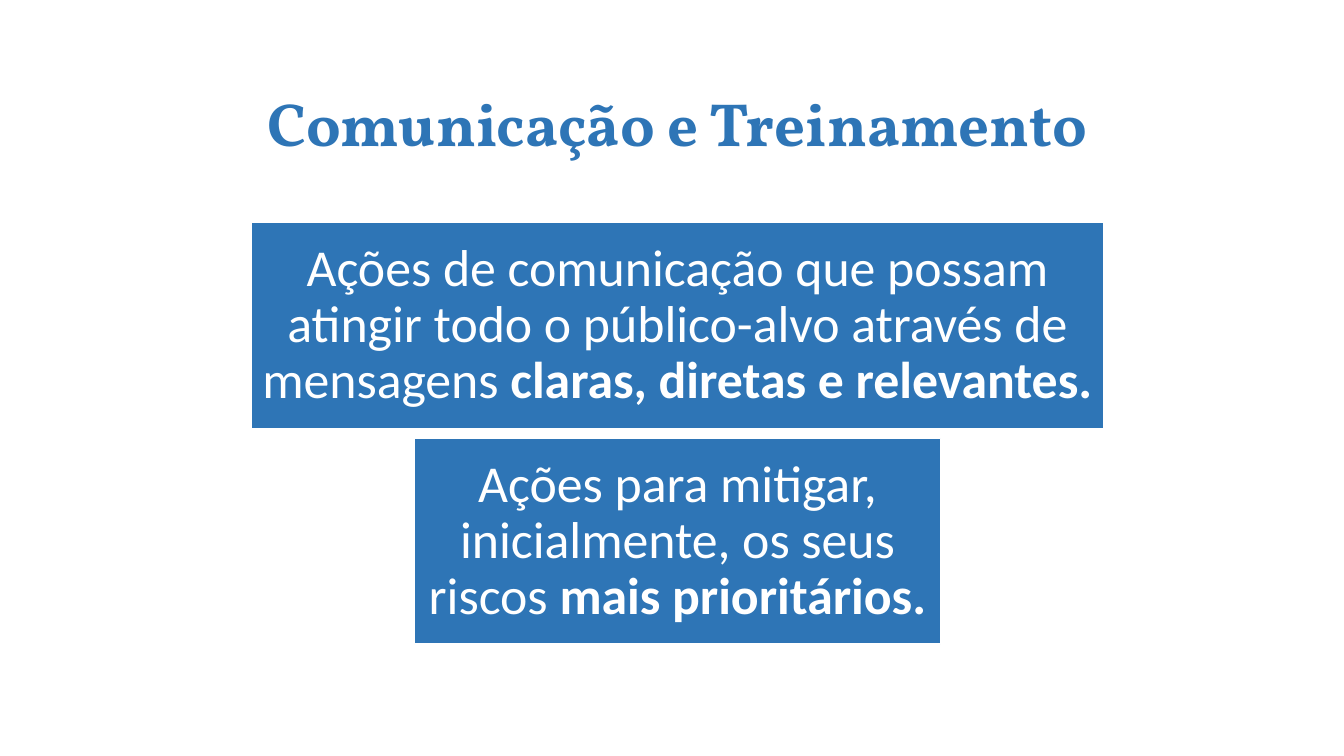
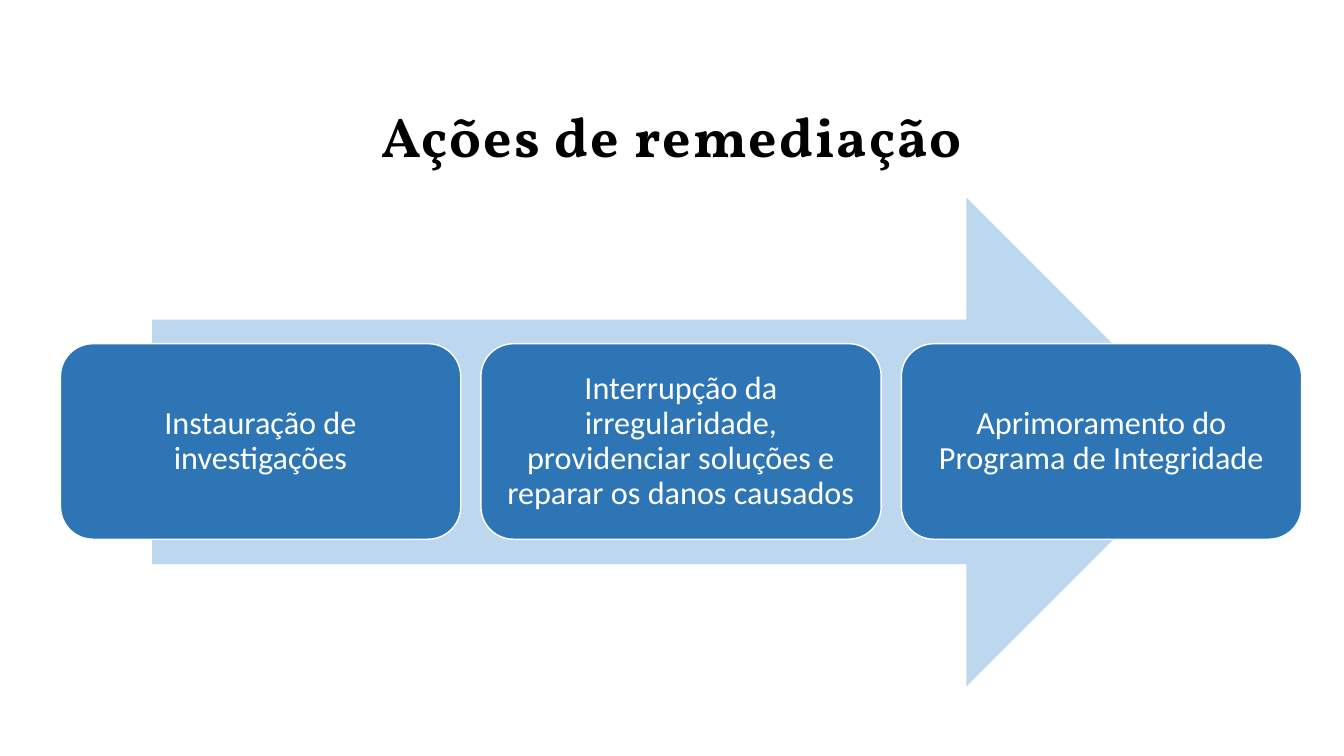
from pptx import Presentation
from pptx.dml.color import RGBColor
from pptx.enum.shapes import MSO_SHAPE
from pptx.enum.text import MSO_ANCHOR, MSO_AUTO_SIZE, PP_ALIGN
from pptx.util import Inches, Pt

RECT, ROUND = MSO_SHAPE.RECTANGLE, MSO_SHAPE.ROUNDED_RECTANGLE
ARROW = MSO_SHAPE.RIGHT_ARROW
TOP, MIDDLE = MSO_ANCHOR.TOP, MSO_ANCHOR.MIDDLE
LEFT, CENTER = PP_ALIGN.LEFT, PP_ALIGN.CENTER
NO_FIT = MSO_AUTO_SIZE.NONE

# Shared look
BLUE, PALE, WHITE, BLACK = "2E75B6", "BDD7EE", "FFFFFF", "000000"
HEAD_FONT, BODY_FONT = "Vollkorn", "Calibri"
TITLE_ONLY = 5


def color(code):
    return RGBColor.from_string(code)


def format_all(target, values):
    for name, value in values.items():
        setattr(target, name, value)


def set_frame(frame, anchor, side, edge):
    format_all(frame, {
        "word_wrap": True, "auto_size": NO_FIT, "vertical_anchor": anchor,
        "margin_left": Inches(side), "margin_right": Inches(side),
        "margin_top": Inches(edge), "margin_bottom": Inches(edge)})


def add_run(para, text, font, size, ink, bold=False):
    run = para.add_run()
    run.text = text
    format_all(run.font, {"name": font, "size": Pt(size), "bold": bold})
    run.font.color.rgb = color(ink)
    return run


def add_slide(deck, text, box, size, ink, anchor=TOP, align=LEFT,
              side=0.1, edge=0.05, leading=1.0, track=0):
    """Add a title-only slide and format its title."""
    slide = deck.slides.add_slide(deck.slide_layouts[TITLE_ONLY])
    title = slide.shapes.title
    left, top, width, height = map(Inches, box)
    format_all(title, {"left": left, "top": top,
                       "width": width, "height": height})
    set_frame(title.text_frame, anchor, side, edge)
    para = title.text_frame.paragraphs[0]
    format_all(para, {"alignment": align, "line_spacing": leading})
    run = add_run(para, text, HEAD_FONT, size, ink, True)
    if track:
        run.font._element.set("spc", str(track))
    return slide


def add_block(slide, kind, box, fill, line=None):
    shape = slide.shapes.add_shape(kind, *map(Inches, box))
    shape.shadow.inherit = False
    shape.fill.solid()
    shape.fill.fore_color.rgb = color(fill)
    if line:
        shape.line.color.rgb = color(line)
        shape.line.width = Pt(1)
    else:
        shape.line.fill.background()
    return shape


def add_card(slide, kind, box, size, text, strong=""):
    """Add a blue card with white text that may end in bold."""
    card = add_block(slide, kind, box, BLUE, WHITE)
    set_frame(card.text_frame, MIDDLE, 0.1, 0.1)
    para = card.text_frame.paragraphs[0]
    format_all(para, {"alignment": CENTER, "line_spacing": 0.9})
    add_run(para, text, BODY_FONT, size, WHITE)
    if strong:
        add_run(para, strong, BODY_FONT, size, WHITE, True)


def build_training(deck):
    slide = add_slide(deck, "Comunicação e Treinamento",
                      (2.55, 0.8, 8.65, 0.83), 43.5, BLUE)
    # Stacked cards on one centre line
    middle, top, height, gap = 6.72, 2.21, 2.04, 0.1
    cards = [
        (8.46, "Ações de comunicação que possam atingir todo o público-alvo "
               "através de mensagens", " claras, diretas e relevantes."),
        (5.22, "Ações para mitigar, inicialmente, os seus riscos ",
         "mais prioritários."),
    ]
    for row, (width, text, strong) in enumerate(cards):
        box = (middle - width / 2, top + row * (height + gap), width, height)
        add_card(slide, RECT, box, 37, text, strong)


def build_actions(deck):
    slide = add_slide(deck, "Ações de remediação", (3.29, 0.91, 6.75, 0.94),
                      39.9, BLACK, MIDDLE, CENTER, 0, 0, 0.9, 140)
    # Arrow behind a row of steps
    add_block(slide, ARROW, (1.51, 1.96, 10.5, 4.85), PALE)
    left, width, gap = 0.6, 3.97, 0.2
    steps = [
        "Instauração de investigações",
        "Interrupção da irregularidade, providenciar soluções e reparar "
        "os danos causados",
        "Aprimoramento do Programa de Integridade",
    ]
    for col, text in enumerate(steps):
        box = (left + col * (width + gap), 3.41, width, 1.94)
        add_card(slide, ROUND, box, 23, text)


def main():
    deck = Presentation()
    format_all(deck, {"slide_width": Inches(13.33),
                      "slide_height": Inches(7.5)})
    build_training(deck)
    build_actions(deck)
    deck.save("out.pptx")


if __name__ == "__main__":
    main()
